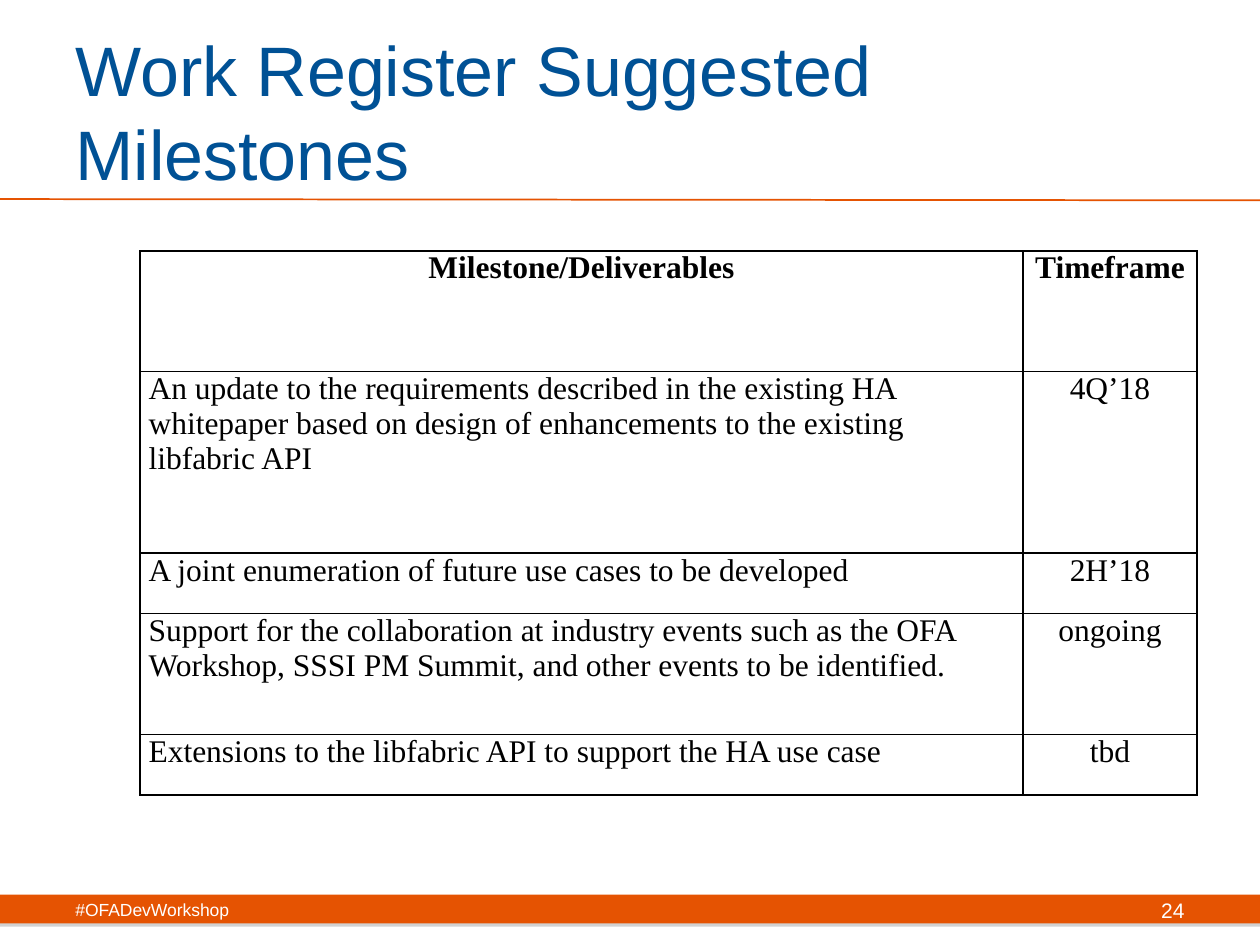
import pptx
import pptx.dml.color
import pptx.enum.shapes
import pptx.enum.text
import pptx.oxml
import pptx.oxml.ns
import pptx.util
from lxml import etree

Inches = pptx.util.Inches
Pt = pptx.util.Pt
RGBColor = pptx.dml.color.RGBColor
ALIGN = pptx.enum.text.PP_ALIGN
ANCHOR = pptx.enum.text.MSO_ANCHOR
qn = pptx.oxml.ns.qn

ORANGE = RGBColor(0xE5, 0x53, 0x02)
BLUE = RGBColor(0x00, 0x51, 0x95)
WHITE = RGBColor(0xFF, 0xFF, 0xFF)
BLACK = RGBColor(0x00, 0x00, 0x00)

# text, (left, top, width, height), size, colour, alignment
TEXTS = [
    ("Work Register Suggested Milestones", (0.5, 0.25, 8.17, 1.25), 40, BLUE, ALIGN.LEFT),
    ("#OFADevWorkshop", (0.5, 7.02, 3.17, 0.4), 10, WHITE, ALIGN.LEFT),
    ("24", (7.17, 7.02, 2.33, 0.4), 12, WHITE, ALIGN.RIGHT),
]
MILESTONES = [
    ("Milestone/Deliverables", "Timeframe"),
    ("An update to the requirements described in the existing HA whitepaper "
     "based on design of enhancements to the existing libfabric API", "4Q’18"),
    ("A joint enumeration of future use cases to be developed", "2H’18"),
    ("Support for the collaboration at industry events such as the OFA Workshop, "
     "SSSI PM Summit, and other events to be identified.", "ongoing"),
    ("Extensions to the libfabric API to support the HA use case", "tbd"),
]
COLUMN_WIDTHS = [7.01, 1.38]
ROW_UNIT = 0.48
ROW_UNITS = [2, 3, 1, 2, 1]

SHADOW_XML = """<a:outerShdw xmlns:a="http://schemas.openxmlformats.org/drawingml/2006/main"
  blurRad="0" dist="22860" dir="5400000" rotWithShape="0">
  <a:srgbClr val="808080"><a:alpha val="35000"/></a:srgbClr></a:outerShdw>"""


def add_run(paragraph, text, font_name, size, color, bold=False):
    run = paragraph.add_run()
    run.text = text
    run.font.name = font_name
    run.font.size = Pt(size)
    run.font.color.rgb = color
    run.font.bold = bold


def add_footer_bar(slide):
    bar = slide.shapes.add_shape(pptx.enum.shapes.MSO_SHAPE.RECTANGLE,
                                 Inches(0), Inches(7.1), Inches(10), Inches(0.23))
    bar.fill.solid()
    bar.fill.fore_color.rgb = ORANGE
    bar.line.fill.background()
    bar.shadow.inherit = False
    effects = bar._element.spPr.find(qn("a:effectLst"))
    effects.append(pptx.oxml.parse_xml(SHADOW_XML))


def add_title_rule(slide):
    rule = slide.shapes.add_connector(pptx.enum.shapes.MSO_CONNECTOR.STRAIGHT,
                                      Inches(0), Inches(1.58), Inches(10), Inches(1.59))
    rule.line.color.rgb = ORANGE
    rule.line.width = Pt(1)
    etree.SubElement(rule._element.spPr, qn("a:effectLst"))


def add_text(slide, text, place, size, color, alignment):
    box = slide.shapes.add_textbox(*map(Inches, place))
    frame = box.text_frame
    frame.word_wrap = True
    frame.vertical_anchor = ANCHOR.MIDDLE
    paragraph = frame.paragraphs[0]
    paragraph.alignment = alignment
    add_run(paragraph, text, "Arial", size, color)


def add_borders(cell):
    """Draw a thin black line on all four sides; borders must precede the fill."""
    properties = cell._tc.get_or_add_tcPr()
    for index, side in enumerate(("a:lnL", "a:lnR", "a:lnT", "a:lnB")):
        line = etree.Element(qn(side), w=str(Pt(1)))
        fill = etree.SubElement(line, qn("a:solidFill"))
        etree.SubElement(fill, qn("a:srgbClr"), val=str(BLACK))
        properties.insert(index, line)


def add_milestone_table(slide):
    table = slide.shapes.add_table(
        len(MILESTONES), len(COLUMN_WIDTHS), Inches(1.11), Inches(1.99),
        Inches(sum(COLUMN_WIDTHS)), Inches(ROW_UNIT * sum(ROW_UNITS))).table
    for column, width in zip(table.columns, COLUMN_WIDTHS):
        column.width = Inches(width)
    for row, units in zip(table.rows, ROW_UNITS):
        row.height = Inches(ROW_UNIT * units)
    for row_index, texts in enumerate(MILESTONES):
        for column_index, text in enumerate(texts):
            is_header = row_index == 0
            cell = table.cell(row_index, column_index)
            cell.fill.background()
            add_borders(cell)
            cell.margin_left = cell.margin_right = Inches(0.07)
            cell.margin_top = cell.margin_bottom = 0
            paragraph = cell.text_frame.paragraphs[0]
            centered = is_header or column_index == 1
            paragraph.alignment = ALIGN.CENTER if centered else ALIGN.LEFT
            paragraph.space_after = Pt(3)
            add_run(paragraph, text, "Times New Roman", 18, BLACK, is_header)


def main():
    presentation = pptx.Presentation()
    presentation.slide_width = Inches(10)
    presentation.slide_height = Inches(7.5)
    slide = presentation.slides.add_slide(presentation.slide_layouts[6])
    add_footer_bar(slide)
    add_title_rule(slide)
    for entry in TEXTS:
        add_text(slide, *entry)
    add_milestone_table(slide)
    presentation.save("out.pptx")


if __name__ == "__main__":
    main()
